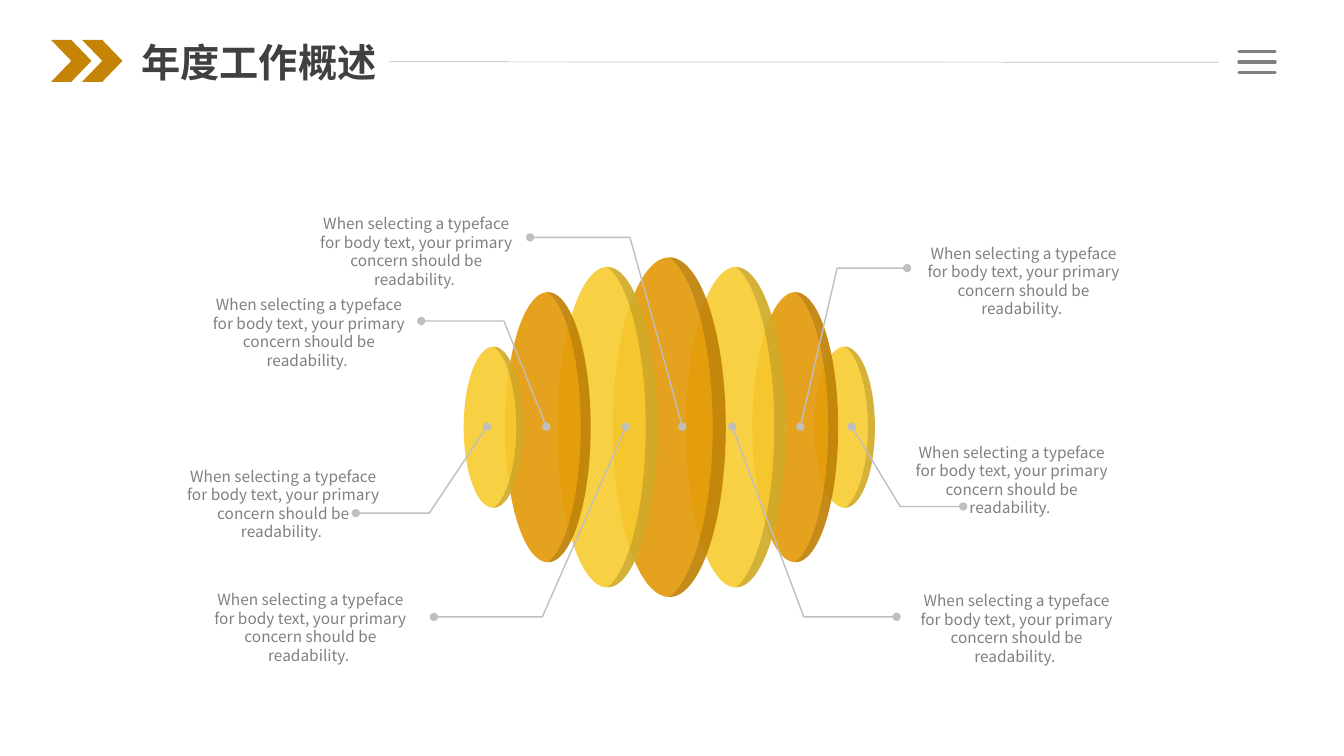
from pptx import Presentation
from pptx import util as u
from pptx.dml import color
from pptx.enum import shapes as s, text as t
from pptx.oxml import ns
from lxml import etree

CELL = 91440
COLS, ROWS = 133.33, 75
FONT = "Noto Sans CJK SC"
GOLD, AMBER, GREY, PALE = "F7CB2F", "E39806", "808080", "BFBFBF"
BODY = "When selecting a typeface for body text, your primary concern should be readability. "
MID = 42.38
DISCS = [
    (83.8, 6, 16, GOLD), (78.9, 8.5, 26.8, AMBER), (73, 9.9, 31.8, GOLD),
    (66.4, 11.2, 33.7, AMBER), (60.25, 9.9, 31.8, GOLD),
    (54.35, 8.5, 26.8, AMBER), (48.95, 5.9, 16, GOLD),
]
RIM = [
    [(0, 45), (34, 0), (77, 0)],
    [(77, 49), (43, 90), (0, 100)],
    [(0, 100), (0, 100), (0, 100)],
    [(55, 100), (100, 55), (100, 0)],
    [(100, -55), (55, -100), (0, -100)],
    [(0, -100), (0, -100), (0, -100)],
    [(43, -90), (77, -49), (77, 0)],
]
LEADS = [
    (48.3, 42.6, 35.3, 50.9), (54.2, 50, 41.8, 31.85), (62.1, 53.8, 43.05, 61.2),
    (67.7, 62.5, 52.6, 23.55), (84.5, 89.3, 95.55, 50.25), (79.4, 83.05, 90, 26.6),
    (72.65, 79.75, 88.95, 61.2),
]
NOTES = [
    (19.55, 28.8), (17, 45.85), (30.2, 20.8), (90.45, 23.7),
    (89.27, 43.45), (89.75, 58.2), (19.7, 58.1),
]


def size(n):
    """Turn grid cells into a length."""
    return u.Emu(round(n * CELL))


def tint(fmt, code, alpha=100):
    """Set a solid colour with an opacity in percent."""
    fmt.solid()
    fmt.fore_color.rgb = color.RGBColor.from_string(code)
    if alpha < 100:
        node = fmt._xPr.find(".//" + ns.qn("a:srgbClr"))
        etree.SubElement(node, ns.qn("a:alpha")).set("val", str(alpha * 1000))


def paint(shp, code, alpha=100):
    """Fill a shape and drop its outline and shadow."""
    shp.shadow.inherit = False
    tint(shp.fill, code, alpha)
    shp.line.fill.background()


def block(group, kind, x, y, w, h, code, alpha=100):
    """Add a filled preset shape."""
    shp = group.shapes.add_shape(kind, size(x), size(y), size(w), size(h))
    paint(shp, code, alpha)
    return shp


def trace(group, pts, close):
    """Add an outline through grid points."""
    pts = [(size(x), size(y)) for x, y in pts]
    pen = group.shapes.build_freeform(*pts[0], scale=1.0)
    pen.add_line_segments(pts[1:], close=close)
    return pen.convert_to_shape()


def bend(shp, curves):
    """Replace an outline with smooth curves on a 200 by 100 field."""
    track = shp._element.spPr.find(".//" + ns.qn("a:path"))
    for node in list(track):
        track.remove(node)
    track.set("w", "200")
    track.set("h", "100")
    steps = [("a:moveTo", curves[-1][-1:])]
    steps += [("a:cubicBezTo", part) for part in curves]
    for tag, part in steps:
        step = etree.SubElement(track, ns.qn(tag))
        for x, y in part:
            spot = etree.SubElement(step, ns.qn("a:pt"))
            spot.set("x", str(100 + y))
            spot.set("y", str(x))
    etree.SubElement(track, ns.qn("a:close"))


def disc(group, x, w, h, code):
    """Add an upright ellipse with a shaded right rim."""
    left, right = MID - w / 4, MID + w / 4
    x0, x1, mid = x + w / 4 - h / 2, x + w / 4 + h / 2, x + w / 4
    oval = block(group, s.MSO_SHAPE.OVAL, x - h / 2, MID - w / 2, h, w, code, 90)
    rim = trace(group, [(x0, left), (x1, left), (mid, right)], True)
    bend(rim, RIM[1:])
    paint(rim, "0D0D0D", 15)
    oval.rotation = rim.rotation = 270


def lead(group, start, turn, end, y):
    """Add a bent leader with a dot at each end."""
    shp = trace(group, [(start, 42.33), (turn, y), (end, y)], False)
    shp.shadow.inherit = False
    shp.fill.background()
    tint(shp.line.fill, PALE)
    shp.line.width = u.Pt(1)
    for tag in ("a:headEnd", "a:tailEnd"):
        etree.SubElement(shp.line._get_or_add_ln(), ns.qn(tag)).set("type", "oval")


def rule(group, x, y, end, low, code, width, cap="flat"):
    """Add a straight line."""
    line = group.shapes.add_connector(
        s.MSO_CONNECTOR.STRAIGHT, size(x), size(y), size(end), size(low))
    tint(line.line.fill, code)
    line.line.width = u.Pt(width)
    line.line._get_or_add_ln().set("cap", cap)
    etree.SubElement(line._element.spPr, ns.qn("a:effectLst"))


def write(group, words, x, y, w, h, pt=11, code=GREY, bold=False,
          wrap=True, align=t.PP_ALIGN.CENTER):
    """Add a text box."""
    frame = group.shapes.add_textbox(size(x), size(y), size(w), size(h)).text_frame
    frame.word_wrap = wrap
    frame.auto_size = t.MSO_AUTO_SIZE.SHAPE_TO_FIT_TEXT
    par = frame.paragraphs[0]
    par.alignment = align
    run = par.add_run()
    run.text = words
    run.font.size, run.font.bold, run.font.name = u.Pt(pt), bold, FONT
    tint(run.font.fill, code)
    etree.SubElement(run.font._element, ns.qn("a:ea")).set("typeface", FONT)


def header(group):
    """Add the title bar."""
    for x in (5.08, 8.15):
        block(group, s.MSO_SHAPE.CHEVRON, x, 3.97, 4, 4.15, "C58405")
    rule(group, 38.6, 6.13, 120.9, 6.18, PALE, .5)
    for i in range(3):
        y = 5.1 + i * 1.05
        rule(group, 122.9, y, 126.5, y, GREY, 2.25, "rnd")
    write(group, "年度工作概述", 13.05, 3.3, 25.6, 5.7, pt=28, code="404040",
          bold=True, wrap=False, align=t.PP_ALIGN.LEFT)


def main():
    """Build the slide."""
    deck = Presentation()
    deck.slide_width, deck.slide_height = size(COLS), size(ROWS)
    slide = deck.slides.add_slide(deck.slide_layouts[6])
    chart = slide.shapes.add_group_shape()
    for item in DISCS:
        disc(chart, *item)
    for item in LEADS:
        lead(chart, *item)
    for x, y in NOTES:
        write(chart, BODY, x, y, 22.2, 8.4)
    header(slide.shapes.add_group_shape())
    deck.save("out.pptx")


if __name__ == "__main__":
    main()
